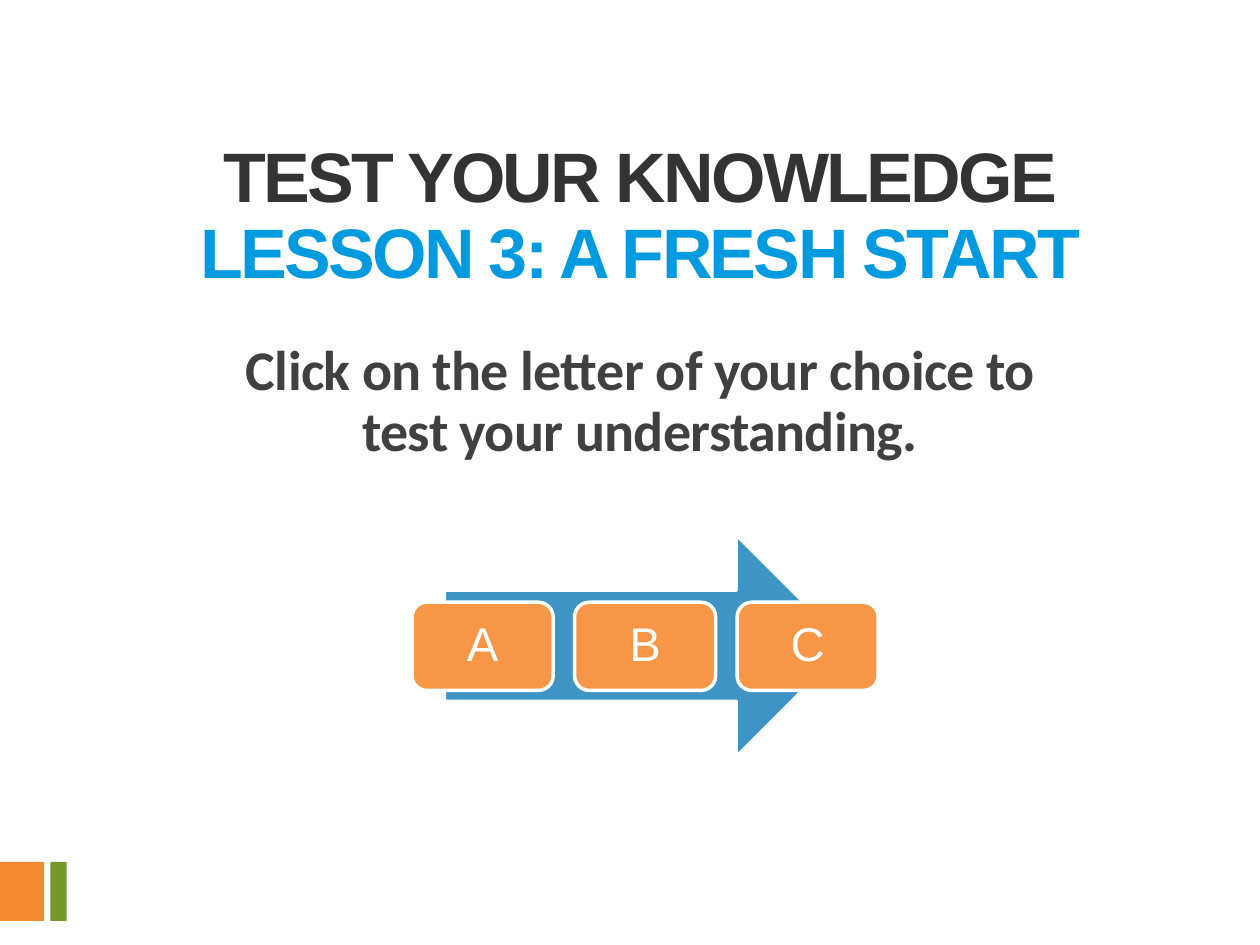
from pptx import Presentation
from pptx.dml.color import RGBColor
from pptx.enum.shapes import MSO_SHAPE as Shape
from pptx.enum.text import MSO_ANCHOR as Anchor, PP_ALIGN as Align
from pptx.util import Inches, Pt

TITLE = [("TEST YOUR KNOWLEDGE", "333333"), ("LESSON 3: A FRESH START", "009AE1")]
PROMPT = [("Click on the letter of your choice to test your understanding.", "404040")]
CHOICES = ["A", "B", "C"]
CORNER_BARS = [(0, 0.35, "F38A31"), (0.4, 0.13, "77972B")]  # left, width, colour

WHITE = "FFFFFF"
CHOICE_LEFT, CHOICE_PITCH = 3.27, 1.29


def color(hex_value):
    return RGBColor.from_string(hex_value)


def add_block(slide, kind, box, fill, line_width=None):
    """Add a filled shape, outlined in white if a line width is given."""
    block = slide.shapes.add_shape(kind, *map(Inches, box))
    block.shadow.inherit = False
    block.fill.solid()
    block.fill.fore_color.rgb = color(fill)
    if line_width:
        block.line.color.rgb = color(WHITE)
        block.line.width = Pt(line_width)
    else:
        block.line.fill.background()
    return block


def write_lines(frame, lines, font, size, bold=False, spacing=0):
    """Write coloured lines as one centred paragraph; spacing is in points."""
    frame.word_wrap = True
    paragraph = frame.paragraphs[0]
    paragraph.text = "\v".join(words for words, _ in lines)
    paragraph.alignment = Align.CENTER
    paragraph.line_spacing = 0.9
    for run, (_, hex_value) in zip(paragraph.runs, lines):
        run.font.name = font
        run.font.size = Pt(size)
        run.font.bold = bold
        run.font.color.rgb = color(hex_value)
        if spacing:
            run.font._element.set("spc", str(round(spacing * 100)))


def add_heading(slide, box, *text):
    heading = slide.shapes.add_textbox(*map(Inches, box))
    write_lines(heading.text_frame, *text)


def main():
    deck = Presentation()
    deck.slide_width, deck.slide_height = Inches(10), Inches(7.5)
    slide = deck.slides.add_slide(deck.slide_layouts[6])

    for left, width, fill in CORNER_BARS:
        add_block(slide, Shape.RECTANGLE, (left, 6.84, width, 0.47), fill)

    add_block(slide, Shape.RIGHT_ARROW, (3.53, 4.25, 3.19, 1.75), "3E94C4", 1.5)
    for index, letter in enumerate(CHOICES):
        left = CHOICE_LEFT + index * CHOICE_PITCH
        button = add_block(slide, Shape.ROUNDED_RECTANGLE,
                           (left, 4.78, 1.12, 0.7), "F79646", 2)
        button.text_frame.vertical_anchor = Anchor.MIDDLE
        write_lines(button.text_frame, [(letter, WHITE)], "Arial", 27)

    add_heading(slide, (0.83, 1.08, 8.5, 1.61), TITLE, "Arial", 40, True, -1.5)
    add_heading(slide, (1.58, 2.67, 7, 1.17), PROMPT, "Calibri", 32, True, -0.4)
    deck.save("out.pptx")


if __name__ == "__main__":
    main()
